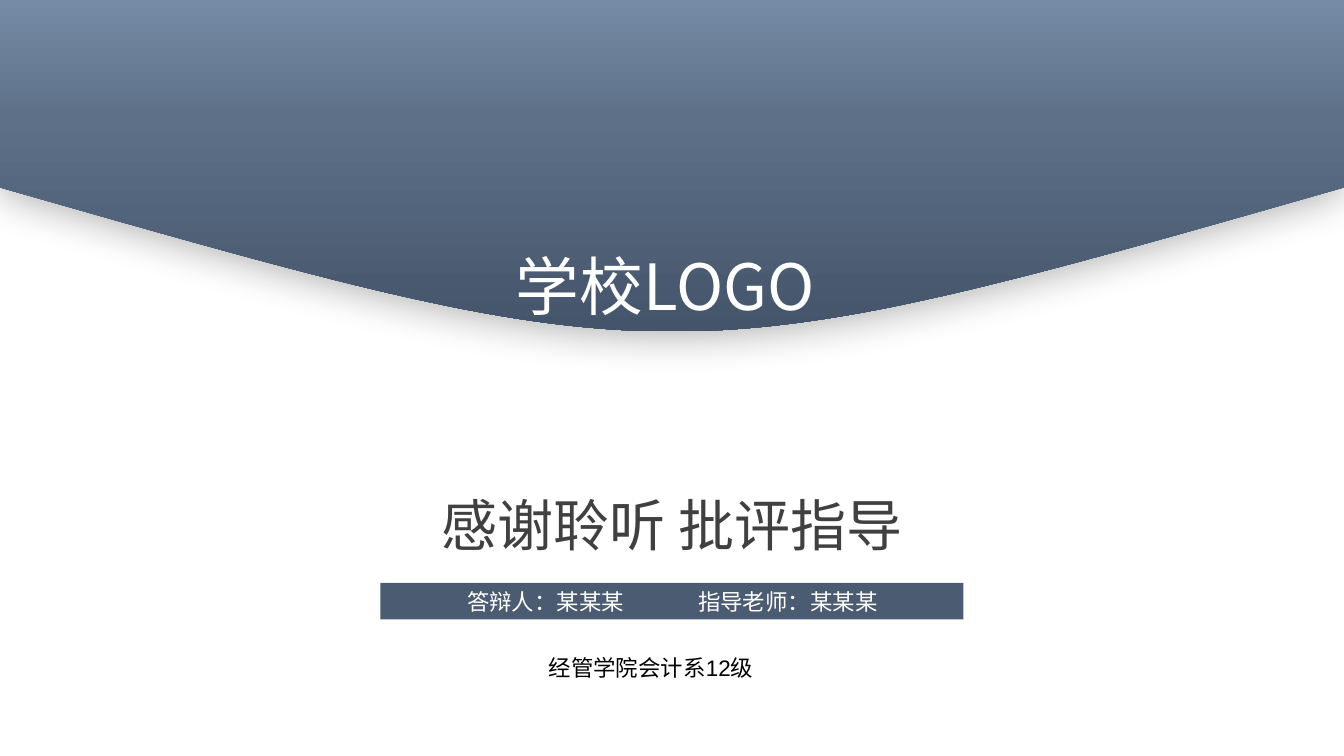
from copy import deepcopy
from lxml import etree
from pptx import Presentation
from pptx.dml.color import RGBColor
from pptx.enum import shapes, text
from pptx.oxml import ns
from pptx.util import Cm, Pt

WIDE, HIGH = 35.71, 20.09
HAN = "Noto Sans CJK SC"


def hue(code):
    return RGBColor.from_string(code)


def add(node, tag, **attrs):
    return etree.SubElement(node, ns.qn(tag), attrs)


def place(shape, box):
    for key, size in zip(("left", "top", "width", "height"), box):
        setattr(shape, key, Cm(size))


def write(shape, words, size, tint, face=HAN, align="LEFT", tab=None):
    frame = shape.text_frame
    form = {"word_wrap": True, "auto_size": text.MSO_AUTO_SIZE.NONE,
            "vertical_anchor": text.MSO_ANCHOR.MIDDLE}
    for key, value in form.items():
        setattr(frame, key, value)
    para = frame.paragraphs[0]
    para.alignment = getattr(text.PP_ALIGN, align)
    if tab:
        stops = add(para._p.get_or_add_pPr(), "a:tabLst")
        add(stops, "a:tab", pos=str(Cm(tab)), algn="l")
    run = para.add_run()
    run.text = words
    font = run.font
    font.color.rgb = hue(tint)
    for key, value in {"size": Pt(size), "name": face, "bold": False}.items():
        setattr(font, key, value)
    add(run._r.get_or_add_rPr(), "a:ea", typeface=HAN)


def label(slide, box, *args, **form):
    shape = slide.shapes.add_textbox(*map(Cm, box))
    write(shape, *args, **form)


def shade(shape):
    fill = shape.fill
    fill.gradient()
    fill.gradient_angle = 270
    first = shape._element.spPr.find(".//" + ns.qn("a:gs"))
    first.addnext(deepcopy(first))
    tints = ((0, "768BA6"), (0.36, "5D7088"), (1, "44546A"))
    for stop, (spot, tint) in zip(fill.gradient_stops, tints):
        stop.position = spot
        stop.color.rgb = hue(tint)
    shape.line.fill.background()
    shape.shadow.inherit = False
    glow = add(shape._element.spPr.find(ns.qn("a:effectLst")), "a:outerShdw",
               blurRad=str(Pt(32)), dist=str(Pt(3)), dir="5400000",
               algn="t", rotWithShape="0")
    add(add(glow, "a:srgbClr", val="000000"), "a:alpha", val="32000")


def header(slide, box):
    left, top, wide, high = box
    edge, steps = 4.98, 60
    dip = edge + (high - edge) * 4 / 3
    curve = []
    for step in range(steps + 1):
        t = step / steps
        bend = 3 * t * (1 - t)
        ends = (1 - t) ** 3 + t ** 3
        across = (1 - t) ** 3 + bend / 2
        curve.append((Cm(left + wide * across),
                      Cm(top + edge * ends + dip * bend)))
    pen = slide.shapes.build_freeform(Cm(left), Cm(top))
    pen.add_line_segments([(Cm(left + wide), Cm(top)), *curve])
    shade(pen.convert_to_shape())
    label(slide, (left + 13.46, top + 6.42, 9.07, 2.29), "学校LOGO", 48, "FFFFFF")


def bar(slide, box):
    shape = slide.shapes.add_shape(shapes.MSO_SHAPE.RECTANGLE, *map(Cm, box))
    shape.shadow.inherit = False
    shape.fill.solid()
    shape.fill.fore_color.rgb = hue("4B5C72")
    shape.line.fill.background()
    shape.text_frame.margin_left = Cm(2.3)
    write(shape, "答辩人：某某某\t指导老师：某某某", 16.9, "FFFFFF", "Arial", tab=6.14)


def thanks(slide, box):
    left, top, wide, high = box
    title = slide.shapes.title
    place(title, (left - 0.66, top, wide + 1.32, 2.06))
    write(title, "感谢聆听 批评指导", 42.2, "404040", align="CENTER")
    bar(slide, (left, top + 2.59, wide, 0.97))
    label(slide, (left + 4.22, top + 4.35, 8.1, 0.97),
          "经管学院会计系12级", 16.9, "000000", "Arial")


def main():
    deck = Presentation()
    deck.slide_width, deck.slide_height = Cm(WIDE), Cm(HIGH)
    slide = deck.slides.add_slide(deck.slide_layouts[5])
    header(slide, (0, 0, WIDE, 8.81))
    thanks(slide, (10.11, 12.9, 15.49, 5.34))
    deck.save("out.pptx")


if __name__ == "__main__":
    main()
